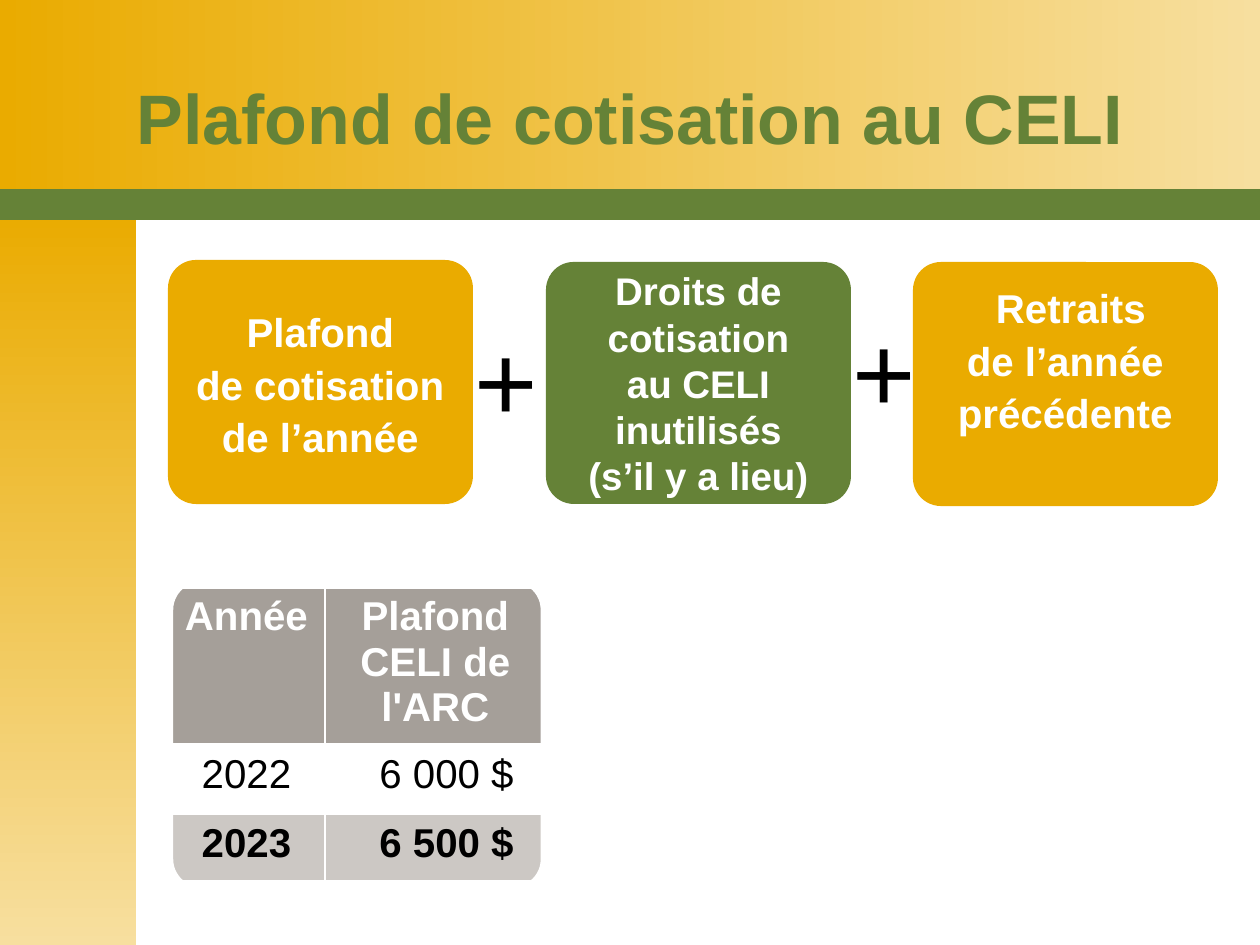
import dataclasses

import lxml.etree
import pptx
import pptx.dml.color
import pptx.enum.shapes
import pptx.enum.text
import pptx.oxml.ns
import pptx.util

EMU_PER_PX = 914400 / 126
SHAPE = pptx.enum.shapes.MSO_SHAPE
ALIGN = pptx.enum.text.PP_ALIGN
ANCHOR = pptx.enum.text.MSO_ANCHOR


@dataclasses.dataclass(frozen=True)
class Theme:
    font: str = "Arial"
    gold: str = "EAAB00"
    pale_gold: str = "F7DF9F"
    green: str = "658237"
    grey: str = "A59F99"
    light_grey: str = "CCC8C4"
    white: str = "FFFFFF"
    black: str = "000000"
    title_size: int = 40
    body_size: int = 23
    compact_size: int = 22
    plus_size: int = 62


def px(value):
    return pptx.util.Emu(round(value * EMU_PER_PX))


def rgb(value):
    return pptx.dml.color.RGBColor.from_string(value)


def write_text(frame, text, *, font, size, color, bold=False,
               align=ALIGN.CENTER, line_spacing=None):
    paragraph = frame.paragraphs[0]
    paragraph.text = text.replace("\n", "\v")
    paragraph.alignment = align
    if line_spacing:
        paragraph.line_spacing = pptx.util.Pt(line_spacing)
    for run in paragraph.runs:
        run.font.name = font
        run.font.size = pptx.util.Pt(size)
        run.font.bold = bold
        run.font.color.rgb = rgb(color)


def set_margins(frame, left=0, top=0, right=0, bottom=0):
    frame.margin_left, frame.margin_top = px(left), px(top)
    frame.margin_right, frame.margin_bottom = px(right), px(bottom)


class SlideBuilder:
    def __init__(self, slide, theme):
        self.slide = slide
        self.theme = theme

    def shape(self, kind, box, fill=None, radius=None):
        shape = self.slide.shapes.add_shape(kind, *map(px, box))
        shape.shadow.inherit = False
        shape.line.fill.background()
        if radius is not None:
            shape.adjustments[0] = radius
        if fill:
            shape.fill.solid()
            shape.fill.fore_color.rgb = rgb(fill)
        else:
            shape.fill.background()
        return shape

    def gradient(self, box, angle):
        shape = self.shape(SHAPE.RECTANGLE, box)
        shape.fill.gradient()
        shape.fill.gradient_angle = angle
        colors = (self.theme.gold, self.theme.pale_gold)
        for stop, color in zip(shape.fill.gradient_stops, colors):
            stop.color.rgb = rgb(color)

    def title(self, text, box):
        title = self.slide.shapes.title
        title.left, title.top, title.width, title.height = map(px, box)
        self.slide.shapes._spTree.append(title._element)
        frame = title.text_frame
        frame.auto_size = pptx.enum.text.MSO_AUTO_SIZE.NONE
        frame.vertical_anchor = ANCHOR.MIDDLE
        write_text(frame, text, font=self.theme.font, size=self.theme.title_size,
                   color=self.theme.green, bold=True)

    def card(self, text, box, fill, size, line_spacing=None, bottom=0):
        frame = self.shape(SHAPE.ROUNDED_RECTANGLE, box, fill, 0.115).text_frame
        frame.word_wrap = False
        frame.vertical_anchor = ANCHOR.MIDDLE
        set_margins(frame, bottom=bottom)
        write_text(frame, text, font=self.theme.font, size=size,
                   color=self.theme.white, bold=True, line_spacing=line_spacing)

    def plus(self, left, top):
        frame = self.slide.shapes.add_textbox(*map(px, (left, top, 95, 136))).text_frame
        frame.word_wrap = True
        set_margins(frame, 13, 0, 13, 6)
        write_text(frame, "+", font=self.theme.font, size=self.theme.plus_size,
                   color=self.theme.black, align=ALIGN.LEFT)

    def border(self, cell, side, width):
        line = lxml.etree.SubElement(cell._tc.get_or_add_tcPr(),
                                     pptx.oxml.ns.qn(f"a:{side}"),
                                     w=str(pptx.util.Pt(width)))
        fill = lxml.etree.SubElement(line, pptx.oxml.ns.qn("a:solidFill"))
        lxml.etree.SubElement(fill, pptx.oxml.ns.qn("a:srgbClr"), val=self.theme.white)

    def table(self, rows, left, top, widths, heights, styles):
        box = (left, top, sum(widths), sum(heights))
        table = self.slide.shapes.add_table(len(rows), len(widths), *map(px, box)).table
        table.horz_banding = False
        for column, width in zip(table.columns, widths):
            column.width = px(width)
        for r, (texts, (fill, color, bold)) in enumerate(zip(rows, styles)):
            table.rows[r].height = px(heights[r])
            for c, text in enumerate(texts):
                cell = table.cell(r, c)
                write_text(cell.text_frame, text, font=self.theme.font,
                           size=self.theme.body_size, color=color, bold=bold)
                if r and c:
                    cell.margin_left = px(35)
                for side, width in (("lnL", 1), ("lnR", 1),
                                    ("lnT", 3 if r == 1 else 1),
                                    ("lnB", 3 if r == 0 else 1)):
                    self.border(cell, side, width)
                cell.fill.solid()
                cell.fill.fore_color.rgb = rgb(fill)

    def frame(self, box, width):
        shape = self.shape(SHAPE.ROUNDED_RECTANGLE, box, radius=0.104)
        shape.line.color.rgb = rgb(self.theme.white)
        shape.line.width = pptx.util.Pt(width)


def main():
    theme = Theme()
    presentation = pptx.Presentation()
    presentation.slide_width, presentation.slide_height = px(1260), px(945)
    slide = presentation.slides.add_slide(presentation.slide_layouts[5])
    builder = SlideBuilder(slide, theme)

    builder.gradient((0, 0, 1260, 189), 0)
    builder.gradient((0, 210, 136, 735), 270)
    builder.shape(SHAPE.RECTANGLE, (0, 189, 1260, 31), theme.green)
    builder.title("Plafond de cotisation au CELI", (63, 38, 1134, 157))

    builder.card("Plafond\nde cotisation\nde l’année", (168, 260, 305, 244),
                 theme.gold, theme.body_size, line_spacing=30)
    builder.card("Droits de\ncotisation\nau CELI\ninutilisés\n(s’il y a lieu)",
                 (546, 262, 305, 242), theme.green, theme.compact_size)
    builder.card(" Retraits\nde l’année\nprécédente", (913, 262, 305, 244),
                 theme.gold, theme.body_size, line_spacing=30, bottom=52)
    builder.plus(462, 313)
    builder.plus(840, 304)

    builder.table(
        [("Année", "Plafond CELI de l'ARC"), ("2022", "6 000 $"), ("2023", "6 500 $")],
        168, 588, (157, 221), (155, 69, 66),
        [(theme.grey, theme.white, True),
         (theme.white, theme.black, False),
         (theme.light_grey, theme.black, True)])
    builder.frame((168, 577, 378, 315), 6)

    presentation.save("out.pptx")


if __name__ == "__main__":
    main()
